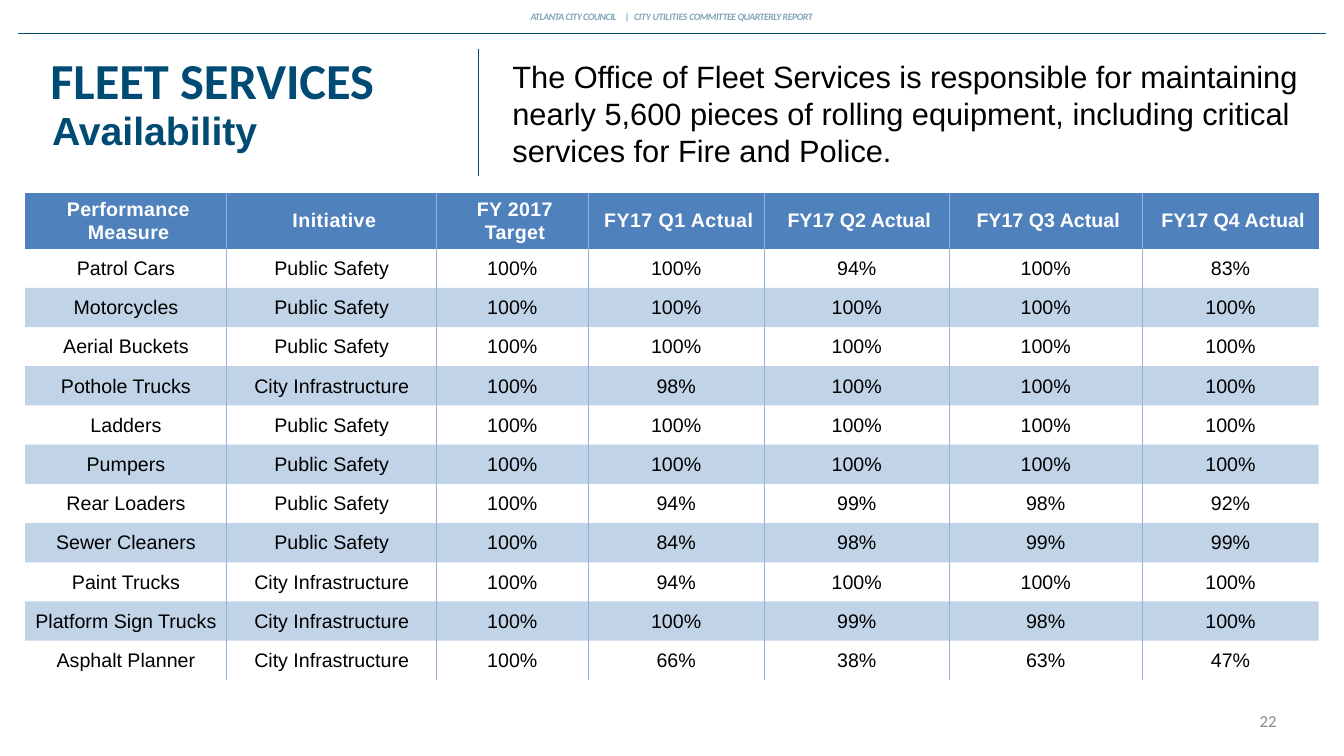
from dataclasses import dataclass

from lxml.etree import SubElement
from pptx import Presentation
from pptx.dml.color import RGBColor
from pptx.enum.shapes import MSO_CONNECTOR
from pptx.enum.text import MSO_ANCHOR, MSO_AUTO_SIZE, PP_ALIGN
from pptx.oxml import parse_xml
from pptx.oxml.ns import nsdecls, qn
from pptx.util import Inches, Pt

TITLE = "FLEET SERVICES"
SUBTITLE = "Availability"
DESCRIPTION = (
    "The Office of Fleet Services is responsible for maintaining nearly 5,600 pieces "
    "of rolling equipment, including critical services for Fire and Police."
)
REPORT_RUNS = [
    ("ATLANTA CITY COUNCIL", -0.3),
    (" ", 4.5),
    ("| ", 0.8),
    ("CITY UTILITIES ", -0.2),
    ("COMMITTEE QUARTERLY REPORT", -0.3),
]
PAGE_NUMBER = "22"
HEADINGS = [
    ("Performance Measure", 0.2),
    ("Initiative", 0.3),
    ("FY 2017 Target", 0.2),
    ("FY17 Q1 Actual", 0.3),
    ("FY17 Q2 Actual", 0),
    ("FY17 Q3 Actual", 0),
    ("FY17 Q4 Actual", 0),
]
SAFETY = "Public Safety"
INFRASTRUCTURE = "City Infrastructure"
MEASURES = [
    ("Patrol Cars", SAFETY, 100, 100, 94, 100, 83),
    ("Motorcycles", SAFETY, 100, 100, 100, 100, 100),
    ("Aerial Buckets", SAFETY, 100, 100, 100, 100, 100),
    ("Pothole Trucks", INFRASTRUCTURE, 100, 98, 100, 100, 100),
    ("Ladders", SAFETY, 100, 100, 100, 100, 100),
    ("Pumpers", SAFETY, 100, 100, 100, 100, 100),
    ("Rear Loaders", SAFETY, 100, 94, 99, 98, 92),
    ("Sewer Cleaners", SAFETY, 100, 84, 98, 99, 99),
    ("Paint Trucks", INFRASTRUCTURE, 100, 94, 100, 100, 100),
    ("Platform Sign Trucks", INFRASTRUCTURE, 100, 100, 99, 98, 100),
    ("Asphalt Planner", INFRASTRUCTURE, 100, 66, 38, 63, 47),
]

GRID_COLUMNS, GRID_ROWS = 160, 90
COLUMN_UNITS = [24, 25, 18, 21, 22, 23, 21]
HEADING_UNITS, MEASURE_UNITS = 6.6, 4.67
NO_STYLE_NO_GRID = "{2D5ABB26-0587-4C30-8999-92F81FD0307C}"


@dataclass(frozen=True)
class Theme:
    navy: str = "004B73"
    report: str = "7FA4B8"
    gray: str = "8C8C8C"
    black: str = "000000"
    white: str = "FFFFFF"
    band: str = "4F81BD"
    rule: str = "95B3D7"
    band_opacity: int = 35
    heading_font: str = "Calibri"
    text_font: str = "Arial"
    title_size: int = 36
    subtitle_size: int = 28
    description_size: int = 22
    table_size: int = 14
    page_size: int = 12
    report_size: int = 7


THEME = Theme()


def grid(units):
    return Inches(units / 12)


def place(shape, left, top, width, height):
    shape.left, shape.top = grid(left), grid(top)
    shape.width, shape.height = grid(width), grid(height)


def set_frame(text_frame, margin, anchor):
    text_frame.word_wrap = True
    text_frame.auto_size = MSO_AUTO_SIZE.NONE
    text_frame.vertical_anchor = anchor
    text_frame.margin_left = text_frame.margin_right = margin
    text_frame.margin_top = text_frame.margin_bottom = margin // 2


def indent(paragraph, left):
    properties = paragraph._p.get_or_add_pPr()
    properties.set("marL", str(int(Inches(left))))
    properties.set("indent", "0")
    return properties


def format_run(run, font, size, color, bold=False, tracking=0):
    run.font.name = font
    run.font.size = Pt(size)
    run.font.color.rgb = RGBColor.from_string(color)
    run.font.bold = bold
    if tracking:
        run._r.get_or_add_rPr().set("spc", str(round(tracking * 100)))


def fill_placeholder(shape, box, text, left_indent, margin, anchor, font, size, color, bold):
    place(shape, *box)
    set_frame(shape.text_frame, margin, anchor)
    shape.text_frame.text = text
    paragraph = shape.text_frame.paragraphs[0]
    SubElement(indent(paragraph, left_indent), qn("a:buNone"))
    paragraph.alignment = PP_ALIGN.LEFT
    paragraph.space_before = Pt(0)
    format_run(paragraph.runs[0], font, size, color, bold)
    return paragraph


def add_text(slide, box, runs, alignment, size, color, bold=False, italic=False):
    shape = slide.shapes.add_textbox(*map(grid, box))
    set_frame(shape.text_frame, 0, MSO_ANCHOR.TOP)
    paragraph = shape.text_frame.paragraphs[0]
    paragraph.alignment = alignment
    for text, tracking in runs:
        run = paragraph.add_run()
        run.text = text
        format_run(run, THEME.heading_font, size, color, bold, tracking)
        run.font.italic = italic


def add_rule(slide, *ends):
    line = slide.shapes.add_connector(MSO_CONNECTOR.STRAIGHT, *map(grid, ends))
    line.line.color.rgb = RGBColor.from_string(THEME.navy)
    line.line.width = Pt(0.75)
    SubElement(line._element.spPr, qn("a:effectLst"))


def paint_cell(cell, row, column):
    if row % 2:
        cell.fill.background()
    else:
        cell.fill.solid()
        cell.fill.fore_color.rgb = RGBColor.from_string(THEME.band)
    properties = cell._tc.get_or_add_tcPr()
    if row and row % 2 == 0:
        color = properties.find(".//" + qn("a:srgbClr"))
        SubElement(color, qn("a:alpha"), val=str(THEME.band_opacity * 1000))
    sides = [("lnL", column > 0), ("lnR", column < len(COLUMN_UNITS) - 1)]
    for position, (side, inner) in enumerate(sides):
        paint = f'<a:solidFill><a:srgbClr val="{THEME.rule}"/></a:solidFill>' if inner else "<a:noFill/>"
        border = parse_xml(f'<a:{side} {nsdecls("a")} w="{int(Pt(0.5))}">{paint}</a:{side}>')
        properties.insert(position, border)


def write_cell(cell, text, is_heading, tracking):
    cell.vertical_anchor = MSO_ANCHOR.MIDDLE
    cell.margin_left = cell.margin_right = Inches(0.08 if is_heading else 0.01)
    cell.margin_top = Inches(0.05 if is_heading else 0.01)
    cell.margin_bottom = Inches(0.05 if is_heading else 0)
    cell.text_frame.text = text
    paragraph = cell.text_frame.paragraphs[0]
    paragraph.alignment = PP_ALIGN.CENTER
    if is_heading:
        indent(paragraph, 0.05)
        paragraph.line_spacing = Pt(16)
    color = THEME.white if is_heading else THEME.black
    format_run(paragraph.runs[0], THEME.text_font, THEME.table_size, color, is_heading, tracking)


def add_measures(slide):
    rows = [HEADINGS] + [
        [(value if isinstance(value, str) else f"{value}%", 0) for value in measure]
        for measure in MEASURES
    ]
    heights = [HEADING_UNITS] + [MEASURE_UNITS] * len(MEASURES)
    box = map(grid, (3, 23, sum(COLUMN_UNITS), sum(heights)))
    table = slide.shapes.add_table(len(rows), len(COLUMN_UNITS), *box).table
    table._tbl.tblPr.find(qn("a:tableStyleId")).text = NO_STYLE_NO_GRID
    for column, units in zip(table.columns, COLUMN_UNITS):
        column.width = grid(units)
    for row_index, (values, units) in enumerate(zip(rows, heights)):
        table.rows[row_index].height = grid(units)
        for column_index, (text, tracking) in enumerate(values):
            cell = table.cell(row_index, column_index)
            write_cell(cell, text, row_index == 0, tracking)
            paint_cell(cell, row_index, column_index)


def main():
    presentation = Presentation()
    presentation.slide_width, presentation.slide_height = grid(GRID_COLUMNS), grid(GRID_ROWS)
    slide = presentation.slides.add_slide(presentation.slide_layouts[3])
    title, subtitle, description = slide.placeholders

    add_text(slide, (58.3, 1.3, 43.3, 3), REPORT_RUNS, PP_ALIGN.CENTER,
             THEME.report_size, THEME.report, True, True)
    add_rule(slide, 2.2, 4, 157.8, 4)
    add_rule(slide, 57, 5.8, 57, 21)
    fill_placeholder(title, (0, 5.8, 56, 7.3), TITLE, 0.5, 0, MSO_ANCHOR.MIDDLE,
                     THEME.heading_font, THEME.title_size, THEME.navy, True)
    fill_placeholder(subtitle, (5, 12, 51, 10), SUBTITLE, 0, Inches(0.1), MSO_ANCHOR.TOP,
                     THEME.text_font, THEME.subtitle_size, THEME.navy, True)
    paragraph = fill_placeholder(description, (61, 6, 96, 15), DESCRIPTION, 0, 0, MSO_ANCHOR.MIDDLE,
                                 THEME.text_font, THEME.description_size, THEME.black, False)
    paragraph.line_spacing = Pt(26.4)
    add_measures(slide)
    add_text(slide, (115.2, 84.6, 36.8, 2.4), [(PAGE_NUMBER, 0)], PP_ALIGN.RIGHT,
             THEME.page_size, THEME.gray)
    presentation.save("out.pptx")


if __name__ == "__main__":
    main()
